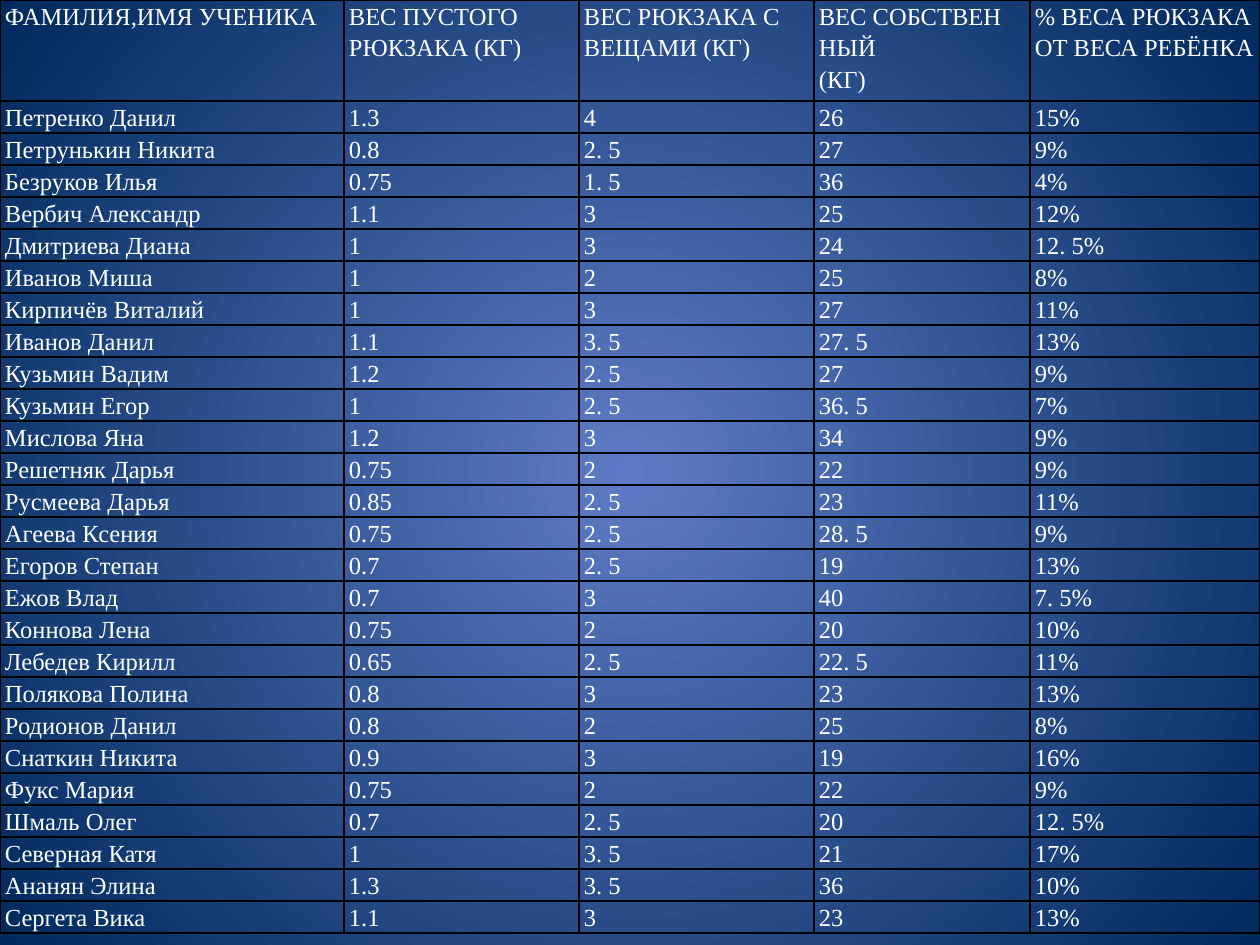
from lxml import etree
from pptx import Presentation
from pptx.dml.color import RGBColor
from pptx.oxml.ns import qn
from pptx.util import Pt

EMU_PER_PX = 914400 / 126
SLIDE_WIDTH, SLIDE_HEIGHT = 1260, 945
BLANK_LAYOUT = 6

FONT = {"name": "Times New Roman", "size": Pt(14), "bold": False}
TEXT_COLOUR = "FFFFFF"
BORDER_COLOUR = "000000"
CENTRE_COLOUR, EDGE_COLOUR = "5E7CC5", "00295C"
LINE_SPACING = 1.15

COLUMN_WIDTHS = [344, 235, 235, 216, 230]
HEADER_HEIGHT, ROW_HEIGHT = 101, 32
SIDE_MARGIN = 5

HEADERS = [
    "ФАМИЛИЯ,ИМЯ УЧЕНИКА",
    "ВЕС ПУСТОГО\nРЮКЗАКА (КГ)",
    "ВЕС РЮКЗАКА С ВЕЩАМИ (КГ)",
    "ВЕС СОБСТВЕН\nНЫЙ\n(КГ)",
    "% ВЕСА РЮКЗАКА ОТ ВЕСА РЕБЁНКА",
]
PUPILS = [
    ("Петренко Данил", "1.3", "4", "26", "15%"),
    ("Петрунькин Никита", "0.8", "2. 5", "27", "9%"),
    ("Безруков Илья", "0.75", "1. 5", "36", "4%"),
    ("Вербич Александр", "1.1", "3", "25", "12%"),
    ("Дмитриева Диана", "1", "3", "24", "12. 5%"),
    ("Иванов Миша", "1", "2", "25", "8%"),
    ("Кирпичёв Виталий", "1", "3", "27", "11%"),
    ("Иванов Данил", "1.1", "3. 5", "27. 5", "13%"),
    ("Кузьмин Вадим", "1.2", "2. 5", "27", "9%"),
    ("Кузьмин Егор", "1", "2. 5", "36. 5", "7%"),
    ("Мислова Яна", "1.2", "3", "34", "9%"),
    ("Решетняк Дарья", "0.75", "2", "22", "9%"),
    ("Русмеева Дарья", "0.85", "2. 5", "23", "11%"),
    ("Агеева Ксения", "0.75", "2. 5", "28. 5", "9%"),
    ("Егоров Степан", "0.7", "2. 5", "19", "13%"),
    ("Ежов Влад", "0.7", "3", "40", "7. 5%"),
    ("Коннова Лена", "0.75", "2", "20", "10%"),
    ("Лебедев Кирилл", "0.65", "2. 5", "22. 5", "11%"),
    ("Полякова Полина", "0.8", "3", "23", "13%"),
    ("Родионов Данил", "0.8", "2", "25", "8%"),
    ("Снаткин Никита", "0.9", "3", "19", "16%"),
    ("Фукс Мария", "0.75", "2", "22", "9%"),
    ("Шмаль Олег", "0.7", "2. 5", "20", "12. 5%"),
    ("Северная Катя", "1", "3. 5", "21", "17%"),
    ("Ананян Элина", "1.3", "3. 5", "36", "10%"),
    ("Сергета Вика", "1.1", "3", "23", "13%"),
]


def px(length):
    return round(length * EMU_PER_PX)


def colour(hex_value):
    return RGBColor.from_string(hex_value)


def paint_background(slide):
    """Fill the slide with a circular gradient around its centre."""
    fill = slide.background.fill
    fill.gradient()
    for stop, hex_value in zip(fill.gradient_stops, (CENTRE_COLOUR, EDGE_COLOUR)):
        stop.color.rgb = colour(hex_value)
    gradient = slide.element.find(".//" + qn("a:gradFill"))
    linear = gradient.find(qn("a:lin"))
    circle = etree.Element(qn("a:path"), path="circle")
    etree.SubElement(circle, qn("a:fillToRect"),
                     {side: "50000" for side in "ltrb"})
    gradient.replace(linear, circle)


def add_borders(cell):
    properties = cell._tc.get_or_add_tcPr()
    for side in ("lnL", "lnR", "lnT", "lnB"):
        line = etree.SubElement(properties, qn("a:" + side), w=str(Pt(1)))
        solid = etree.SubElement(line, qn("a:solidFill"))
        etree.SubElement(solid, qn("a:srgbClr"), val=BORDER_COLOUR)


def fill_cell(cell, text):
    margins = {
        "margin_left": px(SIDE_MARGIN),
        "margin_right": px(SIDE_MARGIN),
        "margin_top": 0,
        "margin_bottom": 0,
    }
    for name, value in margins.items():
        setattr(cell, name, value)
    add_borders(cell)
    cell.fill.background()
    cell.text = text
    for paragraph in cell.text_frame.paragraphs:
        paragraph.line_spacing = LINE_SPACING
        for run in paragraph.runs:
            for name, value in FONT.items():
                setattr(run.font, name, value)
            run.font.color.rgb = colour(TEXT_COLOUR)


def add_weight_table(slide, left, top):
    rows = [HEADERS, *PUPILS]
    heights = [HEADER_HEIGHT] + [ROW_HEIGHT] * len(PUPILS)
    table = slide.shapes.add_table(
        len(rows), len(COLUMN_WIDTHS), px(left), px(top),
        px(sum(COLUMN_WIDTHS)), px(sum(heights))).table
    table.first_row = False
    table.horz_banding = False
    for column, width in zip(table.columns, COLUMN_WIDTHS):
        column.width = px(width)
    for row, height, texts in zip(table.rows, heights, rows):
        row.height = px(height)
        for cell, text in zip(row.cells, texts):
            fill_cell(cell, text)


def main():
    presentation = Presentation()
    presentation.slide_width = px(SLIDE_WIDTH)
    presentation.slide_height = px(SLIDE_HEIGHT)
    slide = presentation.slides.add_slide(presentation.slide_layouts[BLANK_LAYOUT])
    paint_background(slide)
    add_weight_table(slide, 0, 0)
    presentation.save("out.pptx")


if __name__ == "__main__":
    main()
